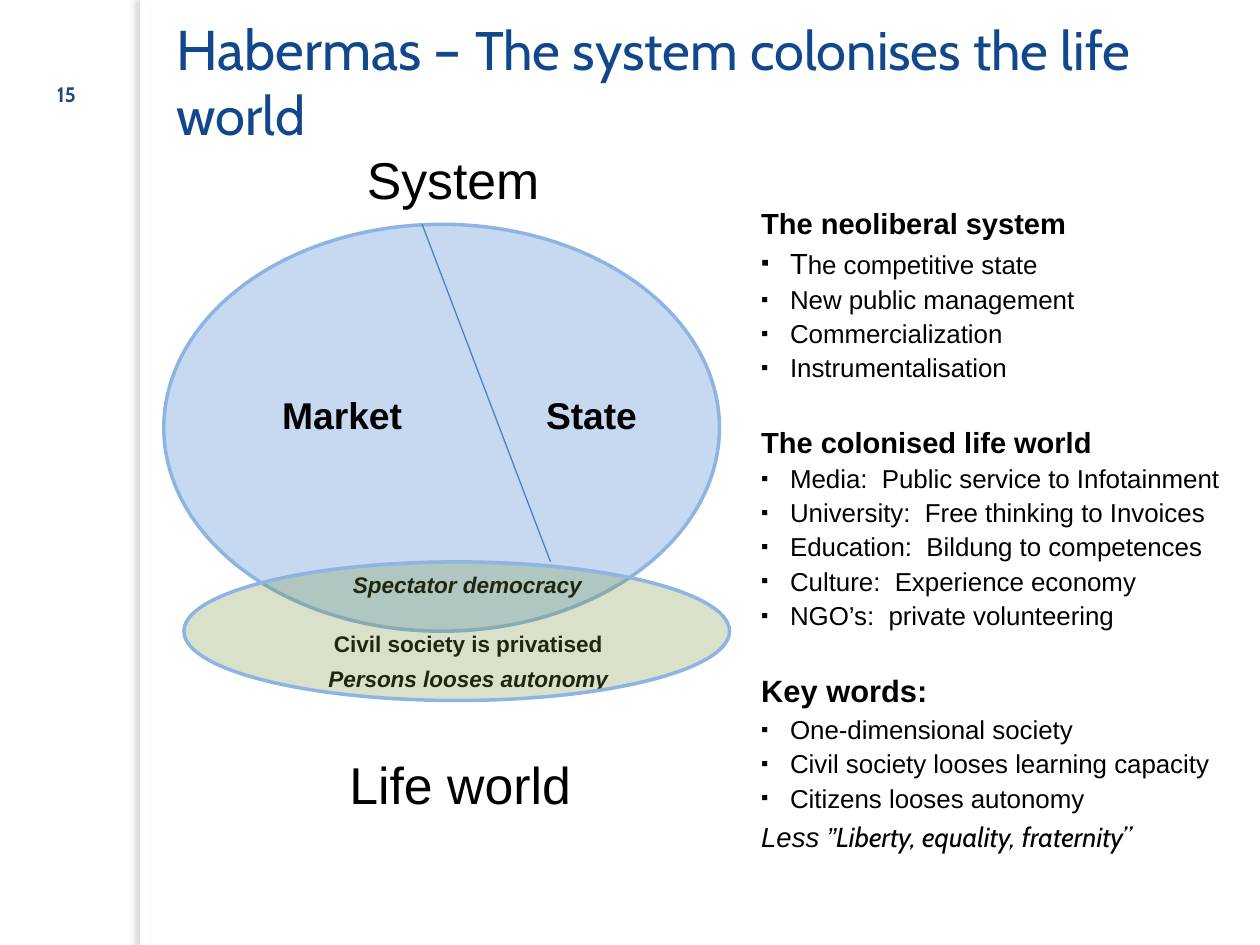
from dataclasses import dataclass

from lxml.etree import SubElement
from pptx import Presentation
from pptx.dml.color import RGBColor
from pptx.enum.shapes import MSO_CONNECTOR, MSO_SHAPE
from pptx.enum.text import MSO_ANCHOR, PP_ALIGN
from pptx.oxml.ns import qn
from pptx.util import Pt


@dataclass(frozen=True)
class Theme:
    body: str = "Arial"
    display: str = "Cabin"
    black: str = "000000"
    white: str = "FFFFFF"
    title: str = "11478B"
    number: str = "1F497D"
    system: str = "C6D9F1"
    life: str = "77933C"
    outline: str = "8EB4E3"
    divider: str = "4F81BD"
    shade: str = "77756F"
    title_size: float = 32
    caption_size: float = 29.6
    part_size: float = 21.3
    heading_size: float = 16.6
    item_size: float = 14.8
    note_size: float = 12.9
    number_size: float = 12


class Deck:
    def __init__(self, theme):
        self.theme = theme
        self.prs = Presentation()
        self.prs.slide_width, self.prs.slide_height = Pt(720), Pt(540)
        self.s = self.prs.slides.add_slide(self.prs.slide_layouts[6])

    def style(self, r, size, color=None, font=None, bold=False, italic=False):
        f = r.font
        f.name, f.size = font or self.theme.body, Pt(size)
        f.bold, f.italic = bold, italic
        f.color.rgb = RGBColor.from_string(color or self.theme.black)

    def shape(self, kind, x, y, w, h, fill, line=None, alpha=None):
        sp = self.s.shapes.add_shape(kind, Pt(x), Pt(y), Pt(w), Pt(h))
        sp.shadow.inherit = False
        sp.fill.solid()
        sp.fill.fore_color.rgb = RGBColor.from_string(fill)
        if alpha:
            clr = sp._element.spPr.find(".//" + qn("a:srgbClr"))
            SubElement(clr, qn("a:alpha"), val=str(alpha * 1000))
        if line:
            sp.line.color.rgb = RGBColor.from_string(line)
            sp.line.width = Pt(2)
        else:
            sp.line.fill.background()
        return sp

    def edge(self, x, w):
        """White full-height strip that casts a soft shadow to the left."""
        sp = self.shape(MSO_SHAPE.RECTANGLE, x, 0, w, 540, self.theme.white)
        effects = sp._element.spPr.find(qn("a:effectLst"))
        shadow = SubElement(effects, qn("a:outerShdw"), blurRad=str(Pt(3)),
                            dist=str(Pt(3)), dir="10800000", rotWithShape="0")
        clr = SubElement(shadow, qn("a:srgbClr"), val=self.theme.shade)
        SubElement(clr, qn("a:alpha"), val="25000")

    def line(self, x1, y1, x2, y2):
        c = self.s.shapes.add_connector(
            MSO_CONNECTOR.STRAIGHT, Pt(x1), Pt(y1), Pt(x2), Pt(y2))
        c.line.color.rgb = RGBColor.from_string(self.theme.divider)
        c.line.width = Pt(0.75)
        SubElement(c._element.spPr, qn("a:effectLst"))

    def box(self, x, y, w, h, anchor=MSO_ANCHOR.MIDDLE):
        tf = self.s.shapes.add_textbox(Pt(x), Pt(y), Pt(w), Pt(h)).text_frame
        tf.word_wrap = True
        tf.vertical_anchor = anchor
        tf.margin_left = tf.margin_right = tf.margin_top = tf.margin_bottom = 0
        return tf

    def label(self, text, cx, cy, size, **look):
        """One centred line of text around the point (cx, cy)."""
        tf = self.box(cx - 110, cy - 20, 220, 40)
        tf.text = text
        p = tf.paragraphs[0]
        p.alignment = PP_ALIGN.CENTER
        self.style(p.runs[0], size, **look)

    def title(self, parts):
        p = self.box(100.8, 21, 612, 50).paragraphs[0]
        for text, size in parts:
            r = p.add_run()
            r.text = text
            self.style(r, size, self.theme.title, self.theme.display)

    def paragraph(self, tf, text, size, before=0, bullet=False, **look):
        p = tf.paragraphs[0] if tf.text == "" else tf.add_paragraph()
        p.text = text
        p.line_spacing, p.space_before = Pt(19.5), Pt(before)
        self.style(p.runs[0], size, **look)
        if bullet:
            pPr = p._p.get_or_add_pPr()
            pPr.set("marL", str(Pt(16.5)))
            pPr.set("indent", str(-Pt(16.5)))
            SubElement(pPr, qn("a:buSzPct"), val="80000")
            SubElement(pPr, qn("a:buFont"), typeface=self.theme.body)
            SubElement(pPr, qn("a:buChar"), char="▪")
        return p

    def section(self, tf, heading, size, before, items, first_gap=0):
        self.paragraph(tf, heading, size, before, bold=True)
        for i, item in enumerate(items):
            self.paragraph(tf, item, self.theme.item_size,
                           0 if i else first_gap, bullet=True)


SECTIONS = [
    ("The neoliberal system", 16.6, 0, [
        "The competitive state", "New public management",
        "Commercialization", "Instrumentalisation"], 3.5),
    ("The colonised life world", 16.6, 24, [
        "Media:  Public service to Infotainment",
        "University:  Free thinking to Invoices",
        "Education:  Bildung to competences",
        "Culture:  Experience economy",
        "NGO’s:  private volunteering"], 0.5),
    ("Key words:", 17.6, 25.5, [
        "One-dimensional society", "Civil society looses learning capacity",
        "Citizens looses autonomy"], 1),
]


def main():
    t = Theme()
    d = Deck(t)
    d.edge(80, 5.8)
    d.shape(MSO_SHAPE.OVAL, 93.6, 128.2, 317.5, 232.5, t.system, t.outline)

    d.label("System", 259, 102, t.caption_size)
    d.label("Market", 195.5, 237, t.part_size, bold=True)
    d.label("State", 338, 237, t.part_size, bold=True)
    d.label("Spectator democracy", 267, 334, t.note_size, bold=True, italic=True)
    d.label("Civil society is privatised", 267.5, 367.5, t.note_size, bold=True)
    d.label("Persons looses autonomy", 267.5, 387.5, t.note_size,
            bold=True, italic=True)
    d.label("Life world", 263, 448, t.caption_size)

    d.title([("Habermas – ", t.title_size),
             ("The system colonises the life world", t.title_size - 1)])

    tf = d.box(435, 117.7, 280, 380, MSO_ANCHOR.TOP)
    for section in SECTIONS:
        d.section(tf, *section)
    first = tf.paragraphs[1]
    first.text = "T"
    rest = first.add_run()
    rest.text = "he competitive state"
    d.style(first.runs[0], t.heading_size)
    d.style(rest, t.item_size)
    motto = d.paragraph(tf, "Less ”", 15.7, 3, italic=True)
    r = motto.add_run()
    r.text = "Liberty, equality, fraternity”"
    d.style(r, 15.7, font=t.display, italic=True)

    d.line(241.2, 128.2, 314.6, 321.1)
    d.label("15", 38, 54, t.number_size, color=t.number, font=t.display, bold=True)
    d.shape(MSO_SHAPE.OVAL, 105.1, 321.1, 311.8, 79.2, t.life, t.outline, alpha=27)
    d.prs.save("out.pptx")


if __name__ == "__main__":
    main()
